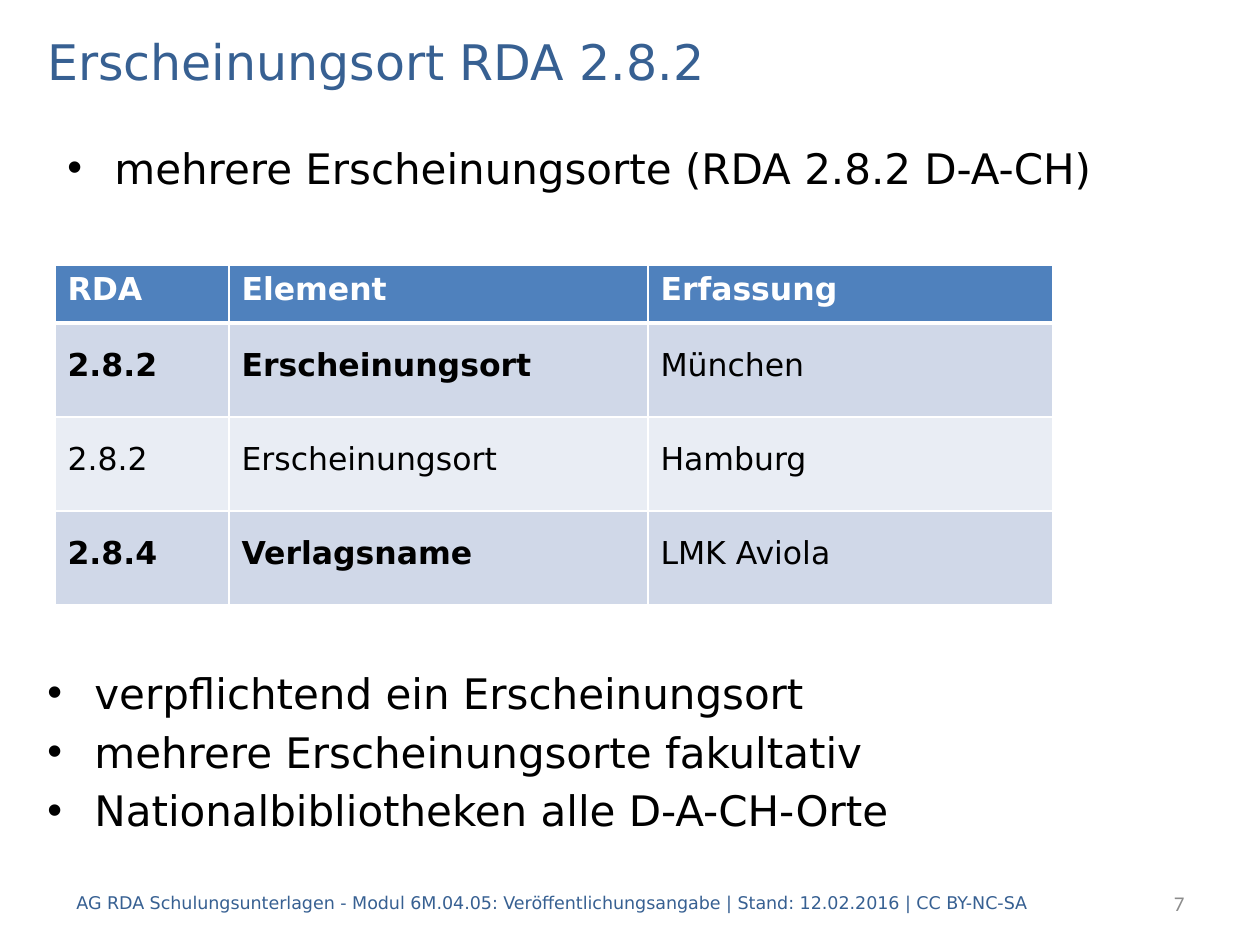
from lxml import etree
from pptx import Presentation
from pptx import util as u
from pptx.dml import color
from pptx.enum import text
from pptx.oxml import ns

PX = 914400 // 126
FONT = "DejaVu Sans"
HUES = {"blue": "376092", "black": "000000", "white": "FFFFFF", "gray": "8C8C8C",
        "head": "4F81BD", "odd": "D0D8E8", "even": "E9EDF4"}
MID = text.MSO_ANCHOR.MIDDLE
TOP = text.MSO_ANCHOR.TOP
ROWS = [("RDA", "Element", "Erfassung"),
        ("2.8.2", "Erscheinungsort", "München"),
        ("2.8.2", "Erscheinungsort", "Hamburg"),
        ("2.8.4", "Verlagsname", "LMK Aviola")]
BOLD = {(0, 0), (0, 1), (0, 2), (1, 0), (1, 1), (3, 0), (3, 1)}


def px(n):
    return u.Emu(n * PX)


def rgb(hue):
    return color.RGBColor.from_string(HUES[hue])


def style(para, size, hue, face=FONT, bold=False):
    for run in para.runs:
        font = run.font
        font.size, font.name, font.bold = u.Pt(size), face, bold
        font.color.rgb = rgb(hue)


def label(slide, box, words, size, hue, anchor=MID, face=FONT, align=None):
    frame = slide.shapes.add_textbox(*map(px, box)).text_frame
    frame.word_wrap = True
    frame.vertical_anchor = anchor
    frame.text = words
    for para in frame.paragraphs:
        para.alignment = align
        style(para, size, hue, face)
    return frame


def bullets(slide, box, lines):
    frame = label(slide, box, "\n".join(lines), 24, "black", TOP)
    for para in frame.paragraphs:
        props = para._p.get_or_add_pPr()
        props.set("marL", str(px(47)))
        props.set("indent", str(-px(47)))
        gap = etree.SubElement(props, ns.qn("a:spcBef"))
        etree.SubElement(gap, ns.qn("a:spcPct"), val="20000")
        etree.SubElement(props, ns.qn("a:buFont"), typeface="Arial")
        etree.SubElement(props, ns.qn("a:buChar"), char="•")


def border(cell, row):
    props = cell._tc.get_or_add_tcPr()
    wide = {"T": 3 if row == 1 else 1, "B": 3 if row == 0 else 1}
    for i, side in enumerate("LRTB"):
        line = etree.Element(ns.qn("a:ln" + side), w=str(u.Pt(wide.get(side, 1))))
        fill = etree.SubElement(line, ns.qn("a:solidFill"))
        etree.SubElement(fill, ns.qn("a:srgbClr"), val=HUES["white"])
        props.insert(i, line)


def grid(slide, box, cols, highs):
    table = slide.shapes.add_table(len(highs), len(cols), *map(px, box)).table
    for col, wide in zip(table.columns, cols):
        col.width = px(wide)
    for r, high in enumerate(highs):
        table.rows[r].height = px(high)
        for c, words in enumerate(ROWS[r]):
            cell = table.cell(r, c)
            cell.text = words
            cell.fill.solid()
            cell.fill.fore_color.rgb = rgb("odd" if r % 2 else "even" if r else "head")
            border(cell, r)
            para = cell.text_frame.paragraphs[0]
            style(para, 18, "black" if r else "white", bold=(r, c) in BOLD)
            if r:
                cell.vertical_anchor = MID
                para.line_spacing = u.Pt(16)
                para.space_before = para.space_after = u.Pt(6)


def footer(slide, box):
    x, y, w, h = box
    label(slide, (x, y, 1052, h),
          "AG RDA Schulungsunterlagen - Modul 6M.04.05: Veröffentlichungsangabe"
          " | Stand: 12.02.2016 | CC BY-NC-SA", 10, "blue")
    label(slide, (x + w - 200, y, 200, h), "7", 12, "gray",
          face="Calibri", align=text.PP_ALIGN.RIGHT)


def main():
    deck = Presentation()
    deck.slide_width, deck.slide_height = u.Inches(10), u.Inches(7.5)
    slide = deck.slides.add_slide(deck.slide_layouts[6])
    label(slide, (35, 25, 1191, 71), "Erscheinungsort RDA 2.8.2", 28, "blue")
    bullets(slide, (55, 136, 1191, 89), ["mehrere Erscheinungsorte (RDA 2.8.2 D-A-CH)"])
    grid(slide, (55, 265, 998, 340), (174, 419, 405), (58, 94, 94, 94))
    bullets(slide, (35, 661, 1191, 169), ["verpflichtend ein Erscheinungsort",
                                          "mehrere Erscheinungsorte fakultativ",
                                          "Nationalbibliotheken alle D-A-CH-Orte"])
    footer(slide, (64, 878, 1133, 50))
    deck.save("out.pptx")


if __name__ == "__main__":
    main()
